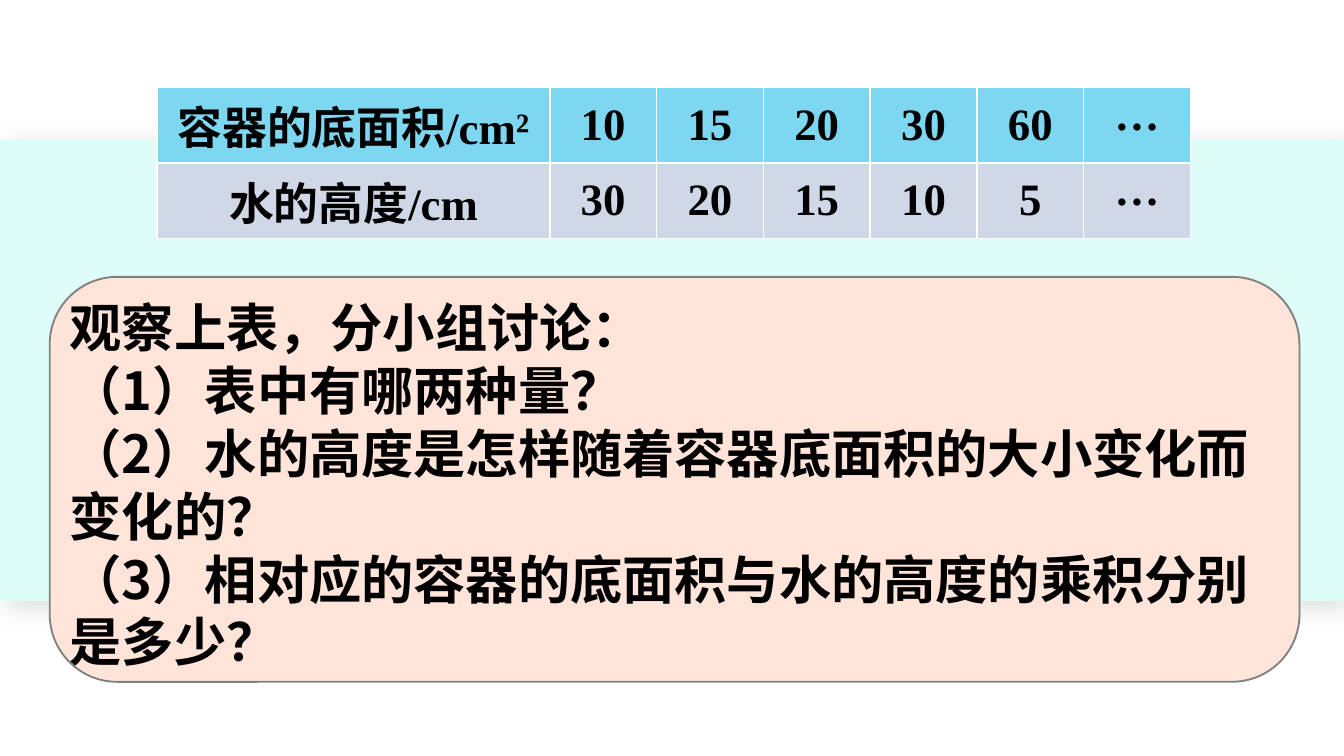
from dataclasses import dataclass

from lxml import etree
from pptx import Presentation
from pptx import util as u
from pptx.dml.color import RGBColor
from pptx.enum import shapes, text
from pptx.oxml import ns

Cm, Pt = u.Cm, u.Pt


@dataclass
class Theme:
    band: str = "DEFDF8"
    head: str = "7ED7F1"
    row: str = "D0D8E8"
    card: str = "FFE4DA"
    edge: str = "808080"
    ink: str = "000000"
    han: str = "Noto Sans CJK SC"
    roman: str = "Times New Roman"
    cell: int = 24
    body: int = 28


T = Theme()
ROWS = [
    ("容器的底面积", "/cm²", ["10", "15", "20", "30", "60", "…"]),
    ("水的高度", "/cm", ["30", "20", "15", "10", "5", "…"]),
]
TASK = [
    "观察上表，分小组讨论：",
    "（1）表中有哪两种量？",
    "（2）水的高度是怎样随着容器底面积的大小变化而变化的？",
    "（3）相对应的容器的底面积与水的高度的乘积分别是多少？",
]


def cms(*box):
    return [Cm(n) for n in box]


def paint(item, color):
    item.fill.solid()
    item.fill.fore_color.rgb = RGBColor.from_string(color)


def style(run, face, size, han=None):
    font = run.font
    font.name, font.size, font.bold = face, Pt(size), True
    font.color.rgb = RGBColor.from_string(T.ink)
    east = etree.SubElement(run._r.get_or_add_rPr(), ns.qn("a:ea"))
    east.set("typeface", han or face)


def label(group, box, lines, face, size, align, han=None):
    frame = group.add_textbox(*cms(*box)).text_frame
    frame.word_wrap = True
    frame.text = "\n".join(lines)
    for para in frame.paragraphs:
        para.alignment = align
        for run in para.runs:
            style(run, face, size, han)


def band(slide, box):
    rect = slide.shapes.add_shape(shapes.MSO_SHAPE.RECTANGLE, *cms(*box))
    paint(rect, T.band)
    rect.line.fill.background()
    glow = etree.SubElement(rect._element.spPr, ns.qn("a:effectLst"))
    shade = etree.SubElement(glow, ns.qn("a:outerShdw"), blurRad=str(Pt(15)),
                             dist=str(Pt(5)), dir=str(45 * 60000))
    tint = etree.SubElement(shade, ns.qn("a:srgbClr"), val=T.ink)
    etree.SubElement(tint, ns.qn("a:alpha"), val="15000")


def grid(slide, box, first=7.42):
    left, top, width, height = box
    count = len(ROWS[0][2])
    step, high = (width - first) / count, height / len(ROWS)
    table = slide.shapes.add_table(len(ROWS), count + 1, *cms(*box)).table
    for n, col in enumerate(table.columns):
        col.width = Cm(step if n else first)
    for r, (name, unit, vals) in enumerate(ROWS):
        table.rows[r].height = Cm(high)
        for cell in table.rows[r].cells:
            paint(cell, T.row if r else T.head)
            cell.vertical_anchor = text.MSO_ANCHOR.MIDDLE
            cell.margin_left = cell.margin_right = Cm(0.18)
            cell.margin_top = cell.margin_bottom = Cm(0.1)
        para = table.cell(r, 0).text_frame.paragraphs[0]
        para.alignment = text.PP_ALIGN.CENTER
        para.space_before = Pt(T.cell * 0.2)
        for part, face in ((name, T.han), (unit, T.roman)):
            run = para.add_run()
            run.text = part
            style(run, face, T.cell)
        for n, val in enumerate(vals):
            lift = 0.18 if val == "…" else 0
            spot = (left + first + n * step, top + 0.03 + r * 1.42 - lift, step, 1.27)
            label(slide.shapes, spot, [val], T.roman, T.cell, text.PP_ALIGN.CENTER, T.han)


def card(slide, box):
    left, top, width, height = box
    group = slide.shapes.add_group_shape().shapes
    rect = group.add_shape(shapes.MSO_SHAPE.ROUNDED_RECTANGLE, *cms(*box))
    rect.shadow.inherit = False
    paint(rect, T.card)
    rect.line.color.rgb = RGBColor.from_string(T.edge)
    rect.line.width = Pt(1)
    spot = (left + 0.13, top + 0.23, width - 0.15, height - 0.2)
    label(group, spot, TASK, T.han, T.body, text.PP_ALIGN.LEFT)


def main():
    deck = Presentation()
    deck.slide_width, deck.slide_height = cms(25.4, 14.28)
    slide = deck.slides.add_slide(deck.slide_layouts[6])
    band(slide, (0, 2.64, 25.4, 8.71))
    grid(slide, (2.97, 1.65, 19.53, 2.74))
    card(slide, (0.94, 5.23, 23.62, 7.65))
    deck.save("out.pptx")


if __name__ == "__main__":
    main()
